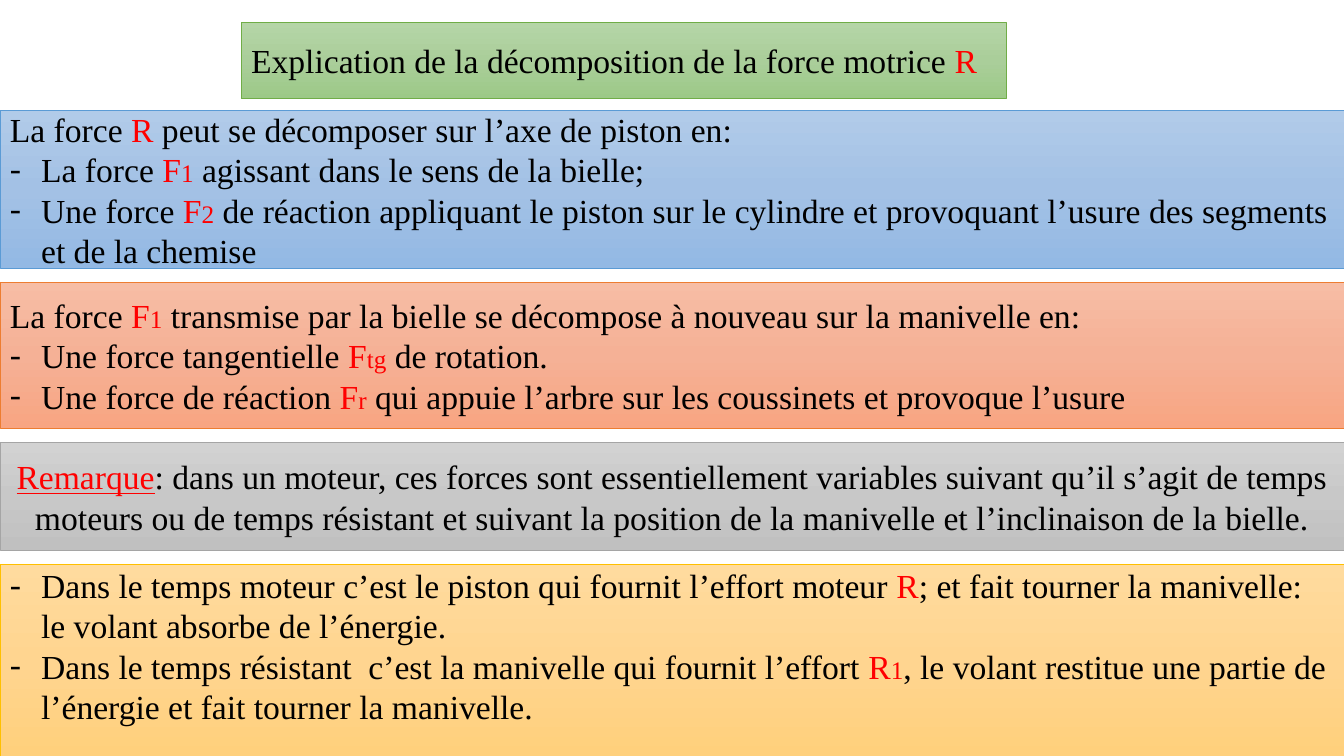
from copy import deepcopy
from dataclasses import dataclass

from pptx import Presentation
from pptx.dml.color import RGBColor
from pptx.enum.shapes import MSO_SHAPE
from pptx.enum.text import MSO_ANCHOR, MSO_AUTO_SIZE, PP_ALIGN
from pptx.oxml.ns import qn
from pptx.util import Inches, Pt

FONT = "Times New Roman"
SLIDE_W, SLIDE_H = 13.33, 7.5
FIRST_TOP, GAP = 1.1, 0.14
BULLET_INDENT = 0.31


@dataclass(frozen=True)
class Span:
    text: str
    color: str = "000000"
    size: int = 24
    underline: bool = False


@dataclass(frozen=True)
class Para:
    spans: tuple[Span, ...]
    bullet: bool = False
    align: PP_ALIGN = PP_ALIGN.LEFT


@dataclass(frozen=True)
class Panel:
    height: float
    stops: tuple[str, str, str]
    line: str
    paras: tuple[Para, ...]
    bottom_inset: float = 0.05


def force(name: str, index: str = "") -> tuple[Span, ...]:
    """Red symbol of a force, with an optional smaller index."""
    symbol = (Span(name, "FF0000"),)
    return symbol + (Span(index, "FF0000", 18),) if index else symbol


def sentence(before: str, symbol: tuple[Span, ...], after: str = "", bullet: bool = False) -> Para:
    tail = (Span(after),) if after else ()
    return Para((Span(before), *symbol, *tail), bullet)


R, R1 = force("R"), force("R", "1")
F1, F2 = force("F", "1"), force("F", "2")
FTG, FR = force("F", "tg"), force("F", "r")

TITLE = Panel(0.76, ("B5D5A7", "AACE9A", "9CC987"), "70AD47", (
    sentence("Explication de la décomposition de la force motrice ", R),
))

PANELS = (
    Panel(1.56, ("B1CBE9", "A3C1E5", "93B9E4"), "5B9BD5", (
        sentence("La force ", R, " peut se décomposer sur l’axe de piston en:"),
        sentence("La force ", F1, " agissant dans le sens de la bielle;", True),
        sentence("Une force ", F2, " de réaction appliquant le piston sur le cylindre et "
                 "provoquant l’usure des segments et de la chemise", True),
    )),
    Panel(1.45, ("F7BDA5", "F5B196", "F8A582"), "ED7D31", (
        sentence("La force ", F1, " transmise par la bielle se décompose à nouveau sur la manivelle en:"),
        sentence("Une force tangentielle ", FTG, " de rotation.", True),
        sentence("Une force de réaction ", FR,
                 " qui appuie l’arbre sur les coussinets et provoque l’usure", True),
    )),
    Panel(1.07, ("D2D2D2", "C8C8C8", "C0C0C0"), "A5A5A5", (
        Para((
            Span("Remarque", "FF0000", underline=True),
            Span(": dans un moteur, ces forces sont essentiellement variables suivant qu’il "
                 "s’agit de temps moteurs ou de temps résistant et suivant la position de la "
                 "manivelle et l’inclinaison de la bielle."),
        ), align=PP_ALIGN.CENTER),
    )),
    Panel(1.9, ("FFDB9E", "FFD590", "FFD07C"), "FFC000", (
        sentence("Dans le temps moteur c’est le piston qui fournit l’effort moteur ", R,
                 "; et fait tourner la manivelle: le volant absorbe de l’énergie.", True),
        sentence("Dans le temps résistant  c’est la manivelle qui fournit l’effort ", R1,
                 ", le volant restitue une partie de l’énergie et fait tourner la manivelle.", True),
    ), bottom_inset=0.34),
)


def rgb(value: str) -> RGBColor:
    return RGBColor.from_string(value)


def set_all(target, values: dict) -> None:
    for name, value in values.items():
        setattr(target, name, value)


def paint(sp, panel: Panel) -> None:
    """Vertical three-stop gradient and thin outline."""
    sp.fill.gradient()
    sp.fill.gradient_angle = 270
    stop_list = sp._element.spPr.find(".//" + qn("a:gsLst"))
    stop_list.insert(1, deepcopy(stop_list[0]))
    for i, (stop, color) in enumerate(zip(sp.fill.gradient_stops, panel.stops)):
        stop.position = i / 2
        stop.color.rgb = rgb(color)
    sp.line.color.rgb = rgb(panel.line)
    sp.line.width = Pt(0.5)


def add_dash(p) -> None:
    pPr = p._p.get_or_add_pPr()
    pPr.set("marL", str(Inches(BULLET_INDENT)))
    pPr.set("indent", str(-Inches(BULLET_INDENT)))
    font = pPr.makeelement(qn("a:buFont"), {"typeface": FONT})
    char = pPr.makeelement(qn("a:buChar"), {"char": "-"})
    pPr.extend((font, char))


def write(sp, panel: Panel) -> None:
    tf = sp.text_frame
    set_all(tf, {
        "word_wrap": True, "auto_size": MSO_AUTO_SIZE.NONE,
        "vertical_anchor": MSO_ANCHOR.MIDDLE,
        "margin_left": Inches(0.1), "margin_right": Inches(0.1),
        "margin_top": Inches(0.05), "margin_bottom": Inches(panel.bottom_inset),
    })
    for i, para in enumerate(panel.paras):
        p = tf.add_paragraph() if i else tf.paragraphs[0]
        set_all(p, {"alignment": para.align, "line_spacing": 1.0,
                    "space_before": Pt(0), "space_after": Pt(0)})
        if para.bullet:
            add_dash(p)
        for span in para.spans:
            r = p.add_run()
            r.text = span.text
            set_all(r.font, {"name": FONT, "size": Pt(span.size), "underline": span.underline})
            r.font.color.rgb = rgb(span.color)


def main() -> None:
    prs = Presentation()
    set_all(prs, {"slide_width": Inches(SLIDE_W), "slide_height": Inches(SLIDE_H)})
    s = prs.slides.add_slide(prs.slide_layouts[5])

    # Title
    title = s.shapes.title
    set_all(title, {"left": Inches(2.39), "top": Inches(0.22),
                    "width": Inches(7.59), "height": Inches(TITLE.height)})
    paint(title, TITLE)
    write(title, TITLE)

    # Full-width panels, stacked with equal gaps
    top = FIRST_TOP
    for panel in PANELS:
        sp = s.shapes.add_shape(MSO_SHAPE.RECTANGLE, Inches(0), Inches(top),
                                Inches(SLIDE_W), Inches(panel.height))
        sp.shadow.inherit = False
        paint(sp, panel)
        write(sp, panel)
        top += panel.height + GAP

    prs.save("out.pptx")


if __name__ == "__main__":
    main()
